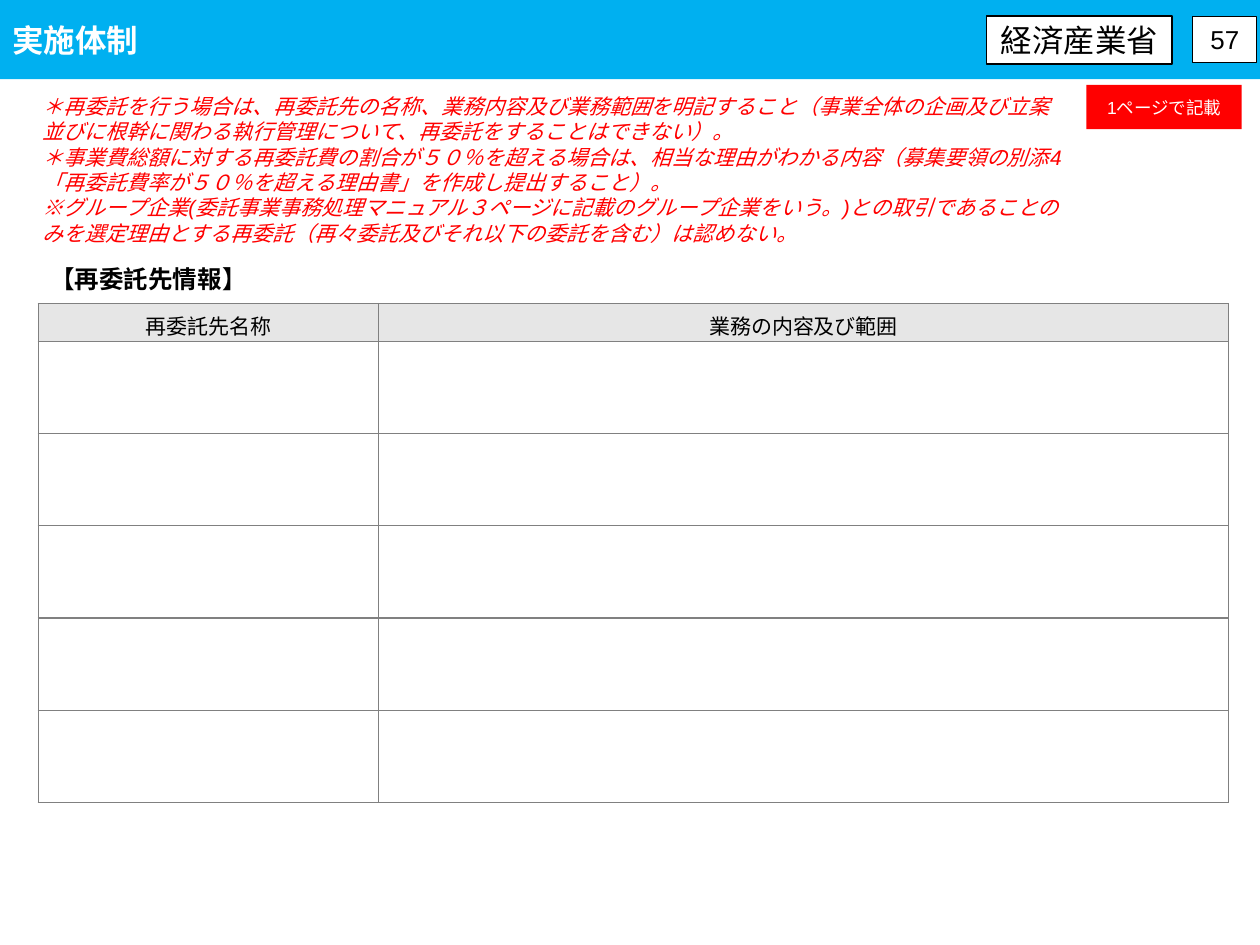
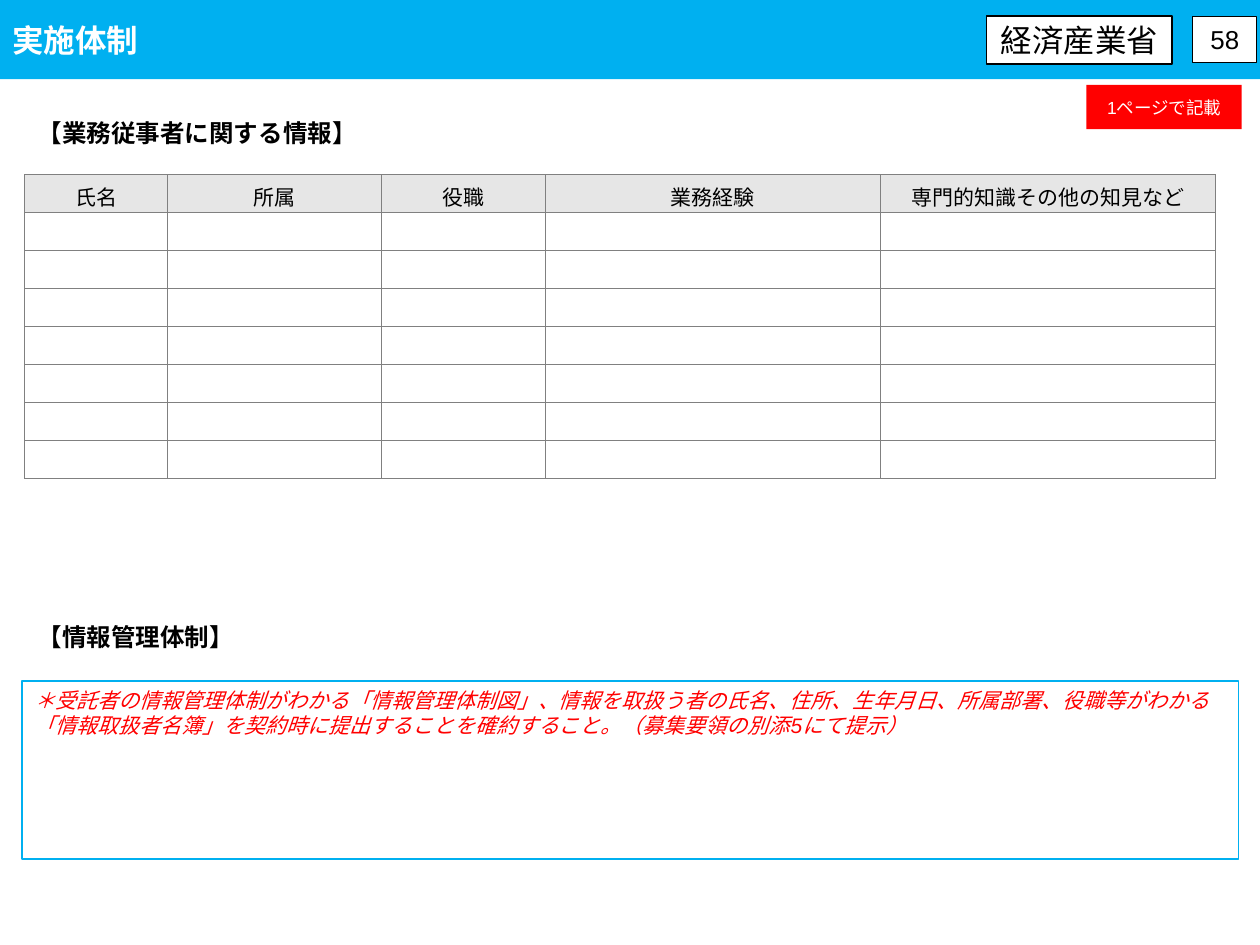
from dataclasses import dataclass
from typing import Any, Optional

import lxml.etree
import pptx
import pptx.dml.color
import pptx.enum.shapes
import pptx.enum.text
import pptx.oxml.ns
import pptx.util

Pt = pptx.util.Pt
qn = pptx.oxml.ns.qn
ALIGN = pptx.enum.text.PP_ALIGN
ANCHOR = pptx.enum.text.MSO_ANCHOR

# Shared colours and fonts
SKY, RED, WHITE, BLACK = "00B0F0", "FF0000", "FFFFFF", "000000"
HEADER_GRAY, BORDER_GRAY = "E6E6E6", "808080"
ARIAL, NOTO = "Arial", "Noto Sans CJK JP"


@dataclass(frozen=True)
class Style:
    size: float
    color: str = BLACK
    font: str = ARIAL
    bold: bool = False
    italic: bool = False
    align: Any = ALIGN.LEFT
    anchor: Any = ANCHOR.TOP
    line_spacing: Optional[float] = None


@dataclass(frozen=True)
class Box:
    left: float
    top: float
    width: float
    height: float
    style: Style
    fill: Optional[str] = None
    line: Optional[str] = None
    line_width: float = 1


@dataclass(frozen=True)
class Grid:
    left: float
    top: float
    columns: dict[str, float]
    body_rows: int
    body_height: float


CENTERED = {"align": ALIGN.CENTER, "anchor": ANCHOR.MIDDLE}
TITLE = Style(18, WHITE, NOTO, bold=True, anchor=ANCHOR.MIDDLE)
HEADING = Style(14, BLACK, NOTO, bold=True, line_spacing=17.3)
GUIDANCE = Style(12, RED, italic=True, line_spacing=14.5)
TABLE_TEXT = Style(12, **CENTERED)
HEADER_HEIGHT = 21.7

TITLE_BAND = Box(0, 0, 720, 45.2, TITLE, SKY)
MINISTRY = Box(563.8, 9.1, 105.9, 27.5, Style(18, **CENTERED), WHITE, BLACK)
PAGE_NUMBER = Box(681.6, 9.3, 36.6, 26.6, Style(14.8, **CENTERED), WHITE, BLACK, 0.75)
PAGE_LIMIT = Box(620.8, 48.5, 88.8, 25.3, Style(10, WHITE, **CENTERED), RED)


def rgb(color: str) -> pptx.dml.color.RGBColor:
    return pptx.dml.color.RGBColor.from_string(color)


def apply(target: Any, values: dict[str, Any]) -> None:
    for name, value in values.items():
        setattr(target, name, value)


def write_paragraph(paragraph: Any, text: str, style: Style) -> None:
    paragraph.alignment = style.align
    if style.line_spacing:
        paragraph.line_spacing = Pt(style.line_spacing)
    run = paragraph.add_run()
    run.text = text
    apply(run.font, {"name": style.font, "size": Pt(style.size),
                     "bold": style.bold, "italic": style.italic})
    run.font.color.rgb = rgb(style.color)
    east_asian = lxml.etree.Element(qn("a:ea"), typeface=NOTO)
    run.font._element.find(qn("a:latin")).addnext(east_asian)


def draw_box(slide: Any, box: Box, *paragraphs: str) -> None:
    place = [Pt(v) for v in (box.left, box.top, box.width, box.height)]
    if box.fill or box.line:
        shape = slide.shapes.add_shape(pptx.enum.shapes.MSO_SHAPE.RECTANGLE, *place)
        shape.shadow.inherit = False
        if box.fill:
            shape.fill.solid()
            shape.fill.fore_color.rgb = rgb(box.fill)
        else:
            shape.fill.background()
        if box.line:
            shape.line.color.rgb = rgb(box.line)
            shape.line.width = Pt(box.line_width)
        else:
            shape.line.fill.background()
    else:
        shape = slide.shapes.add_textbox(*place)
    frame = shape.text_frame
    apply(frame, {"word_wrap": True, "vertical_anchor": box.style.anchor})
    for index, text in enumerate(paragraphs):
        paragraph = frame.add_paragraph() if index else frame.paragraphs[0]
        write_paragraph(paragraph, text, box.style)


def draw_heading(slide: Any, left: float, top: float, text: str) -> None:
    draw_box(slide, Box(left, top, 500, 24.5, HEADING), text)


def add_borders(cell: Any) -> None:
    properties = cell._tc.get_or_add_tcPr()
    for side in ("a:lnL", "a:lnR", "a:lnT", "a:lnB"):
        border = lxml.etree.SubElement(properties, qn(side), w=str(Pt(0.75)))
        fill = lxml.etree.SubElement(border, qn("a:solidFill"))
        lxml.etree.SubElement(fill, qn("a:srgbClr"), val=BORDER_GRAY)


def draw_grid(slide: Any, grid: Grid) -> None:
    heights = [HEADER_HEIGHT] + [grid.body_height] * grid.body_rows
    table = slide.shapes.add_table(
        len(heights), len(grid.columns), Pt(grid.left), Pt(grid.top),
        Pt(sum(grid.columns.values())), Pt(sum(heights))).table
    apply(table, {"first_row": False, "horz_banding": False})
    for column, width in zip(table.columns, grid.columns.values()):
        column.width = Pt(width)
    for row, height in zip(table.rows, heights):
        row.height = Pt(height)
        for cell in row.cells:
            add_borders(cell)
            apply(cell, {"margin_top": Pt(3.6), "margin_bottom": Pt(0),
                         "vertical_anchor": ANCHOR.MIDDLE})
            cell.fill.solid()
            cell.fill.fore_color.rgb = rgb(WHITE)
            # Keeps the empty rows as low as the header
            lxml.etree.SubElement(cell.text_frame.paragraphs[0]._p,
                                  qn("a:endParaRPr"), sz="1200")
    for cell, label in zip(table.rows[0].cells, grid.columns):
        cell.fill.fore_color.rgb = rgb(HEADER_GRAY)
        write_paragraph(cell.text_frame.paragraphs[0], label, TABLE_TEXT)


def start_slide(deck: Any, number: int) -> Any:
    slide = deck.slides.add_slide(deck.slide_layouts[6])
    draw_box(slide, TITLE_BAND, "実施体制")
    draw_box(slide, MINISTRY, "経済産業省")
    draw_box(slide, PAGE_NUMBER, str(number))
    draw_box(slide, PAGE_LIMIT, "1ページで記載")
    return slide


def build_subcontractors(deck: Any) -> None:
    slide = start_slide(deck, 57)
    draw_box(
        slide, Box(17.3, 49.7, 599, 94.3, GUIDANCE),
        "＊再委託を行う場合は、再委託先の名称、業務内容及び業務範囲を明記すること"
        "（事業全体の企画及び立案並びに根幹に関わる執行管理について、再委託をすることはできない）。",
        "＊事業費総額に対する再委託費の割合が５０％を超える場合は、相当な理由がわかる内容"
        "（募集要領の別添4「再委託費率が５０％を超える理由書」を作成し提出すること）。",
        "※グループ企業(委託事業事務処理マニュアル３ページに記載のグループ企業をいう。)"
        "との取引であることのみを選定理由とする再委託（再々委託及びそれ以下の委託を含む）は認めない。")
    draw_heading(slide, 21.6, 146.9, "【再委託先情報】")
    draw_grid(slide, Grid(21.8, 173.4, {"再委託先名称": 194.4, "業務の内容及び範囲": 486}, 5, 52.7))


def build_staff(deck: Any) -> None:
    slide = start_slide(deck, 58)
    draw_heading(slide, 14.4, 63.4, "【業務従事者に関する情報】")
    staff_columns = {"氏名": 81.6, "所属": 122.4, "役職": 93.6,
                     "業務経験": 191.5, "専門的知識その他の知見など": 191.5}
    draw_grid(slide, Grid(14.1, 99.8, staff_columns, 7, HEADER_HEIGHT))
    draw_heading(slide, 14.4, 351.4, "【情報管理体制】")
    draw_box(
        slide, Box(12.7, 389, 695, 102, GUIDANCE, line=SKY),
        "＊受託者の情報管理体制がわかる「情報管理体制図」、情報を取扱う者の氏名、住所、生年月日、"
        "所属部署、役職等がわかる「情報取扱者名簿」を契約時に提出することを確約すること。"
        "（募集要領の別添5にて提示）")


def main() -> None:
    deck = pptx.Presentation()
    apply(deck, {"slide_width": Pt(720), "slide_height": Pt(540)})
    build_subcontractors(deck)
    build_staff(deck)
    deck.save("out.pptx")


if __name__ == "__main__":
    main()
